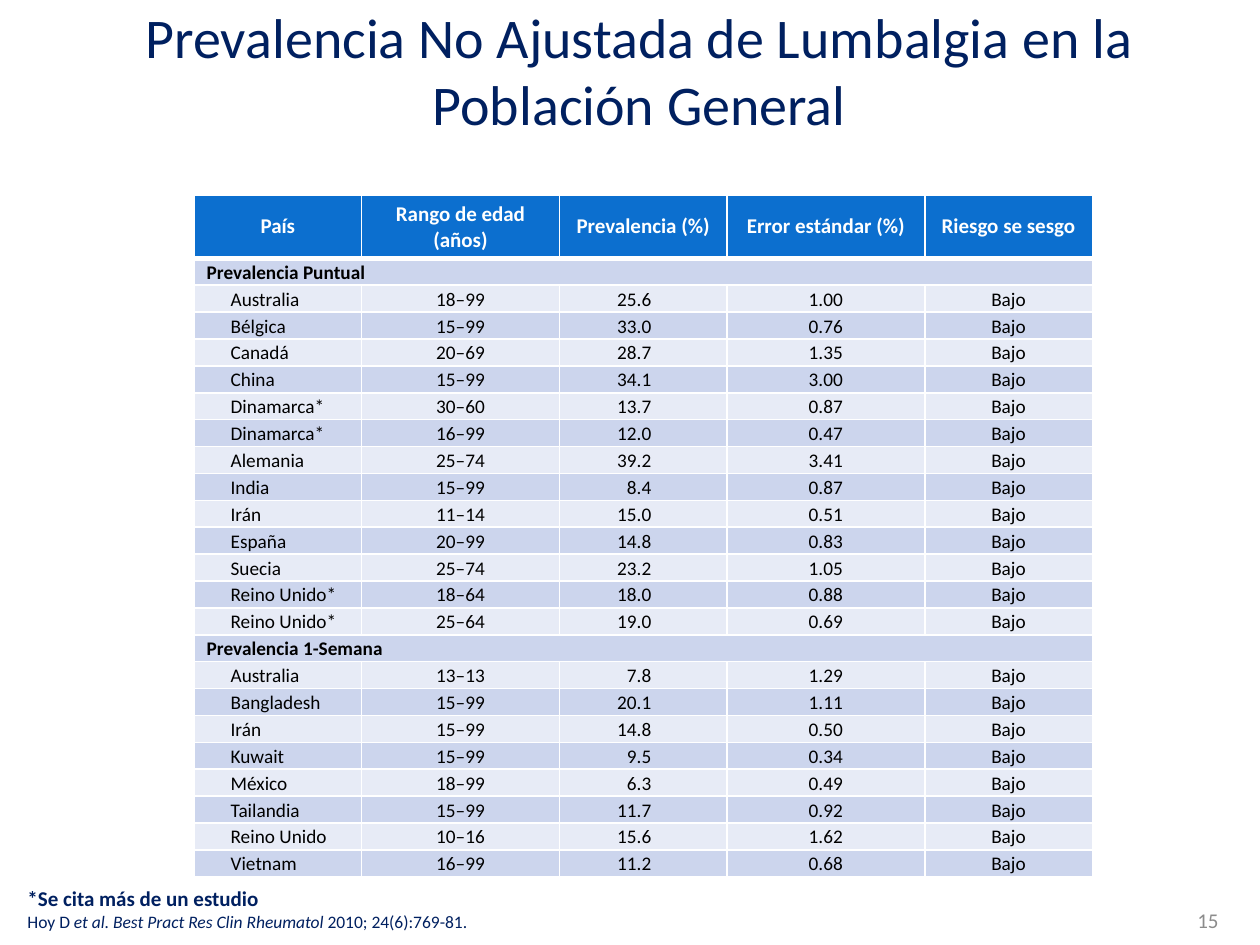
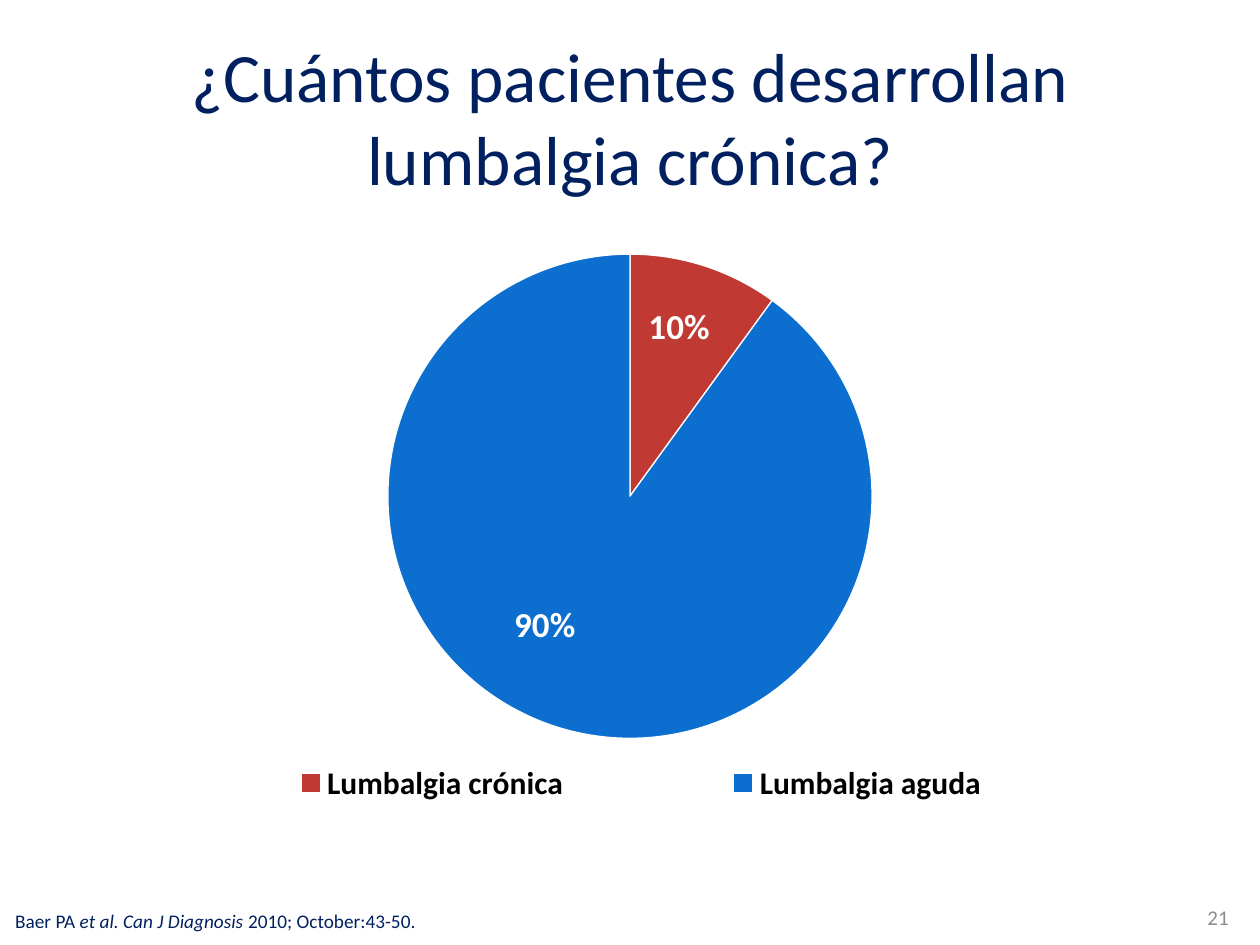
from pptx import Presentation
from pptx.chart.data import CategoryChartData
from pptx.dml.color import RGBColor
from pptx.enum.chart import XL_CHART_TYPE, XL_LABEL_POSITION, XL_LEGEND_POSITION
from pptx.enum.text import MSO_ANCHOR, PP_ALIGN
from pptx.oxml import parse_xml
from pptx.oxml.ns import nsdecls
from pptx.util import Inches, Pt

FONT = "Calibri"
NAVY, BLUE, RED = "002060", "0C6FCF", "C03932"
WHITE, BLACK, GREY = "FFFFFF", "000000", "8C8C8C"
BAND_DARK, BAND_LIGHT = "CCD5ED", "E7EBF6"
LEFT, CENTER, RIGHT = PP_ALIGN.LEFT, PP_ALIGN.CENTER, PP_ALIGN.RIGHT

HEADERS = ["País", "Rango de edad (años)", "Prevalencia (%)",
           "Error estándar (%)", "Riesgo se sesgo"]
COL_WIDTHS = [1.33, 1.57, 1.33, 1.57, 1.33]
RISK = "Bajo"
SECTIONS = {
    "Prevalencia Puntual": [
        ("Australia", "18–99", "25.6", "1.00"),
        ("Bélgica", "15–99", "33.0", "0.76"),
        ("Canadá", "20–69", "28.7", "1.35"),
        ("China", "15–99", "34.1", "3.00"),
        ("Dinamarca*", "30–60", "13.7", "0.87"),
        ("Dinamarca*", "16–99", "12.0", "0.47"),
        ("Alemania", "25–74", "39.2", "3.41"),
        ("India", "15–99", "8.4", "0.87"),
        ("Irán", "11–14", "15.0", "0.51"),
        ("España", "20–99", "14.8", "0.83"),
        ("Suecia", "25–74", "23.2", "1.05"),
        ("Reino Unido*", "18–64", "18.0", "0.88"),
        ("Reino Unido*", "25–64", "19.0", "0.69"),
    ],
    "Prevalencia 1-Semana": [
        ("Australia", "13–13", "7.8", "1.29"),
        ("Bangladesh", "15–99", "20.1", "1.11"),
        ("Irán", "15–99", "14.8", "0.50"),
        ("Kuwait", "15–99", "9.5", "0.34"),
        ("México", "18–99", "6.3", "0.49"),
        ("Tailandia", "15–99", "11.7", "0.92"),
        ("Reino Unido", "10–16", "15.6", "1.62"),
        ("Vietnam", "16–99", "11.2", "0.68"),
    ],
}
# category, value, colour, label offset as fractions of the chart
SLICES = [("Lumbalgia crónica", 10, RED, (0.01, -0.08)),
          ("Lumbalgia aguda", 90, BLUE, (-0.04, 0.02))]
LABEL_FORMAT = '#,##0"%"'


def rgb(color):
    return RGBColor.from_string(color)


def style(font, size, color, bold=False):
    font.name, font.size, font.bold = FONT, Pt(size), bold
    font.color.rgb = rgb(color)


def add_title(s, box, text, size):
    title = s.shapes.title
    title.left, title.top, title.width, title.height = map(Inches, box)
    tf = title.text_frame
    tf.text = text
    tf.word_wrap = True
    tf.vertical_anchor = MSO_ANCHOR.MIDDLE
    p = tf.paragraphs[0]
    p.alignment = CENTER
    style(p.runs[0].font, size, NAVY)


def add_text_frame(s, box, anchor):
    tf = s.shapes.add_textbox(*map(Inches, box)).text_frame
    tf.word_wrap = True
    tf.vertical_anchor = anchor
    return tf


def add_slide_number(s, left, top, number):
    tf = add_text_frame(s, (left, top, 2.33, 0.4), MSO_ANCHOR.MIDDLE)
    tf.text = number
    p = tf.paragraphs[0]
    p.alignment = RIGHT
    style(p.runs[0].font, 12, GREY)


def write_citation(p, size, authors, journal, issue):
    """Fill a paragraph with a reference whose journal part is italic."""
    for text in (authors, journal, issue):
        r = p.add_run()
        r.text = text
        style(r.font, size, NAVY)
        r.font.italic = text == journal


def set_borders(cell, bottom):
    """Draw white cell edges, 1 pt wide except for the bottom one."""
    widths = {"lnL": 1, "lnR": 1, "lnT": 1, "lnB": bottom}
    tcPr = cell._tc.get_or_add_tcPr()
    for i, (edge, width) in enumerate(widths.items()):
        tcPr.insert(i, parse_xml(
            f'<a:{edge} {nsdecls("a")} w="{Pt(width)}"><a:solidFill>'
            f'<a:srgbClr val="{WHITE}"/></a:solidFill></a:{edge}>'))


def write_cell(cell, text, fill, size, color, bold, align, bottom=1):
    cell.text = text
    cell.vertical_anchor = MSO_ANCHOR.MIDDLE
    cell.fill.solid()
    cell.fill.fore_color.rgb = rgb(fill)
    set_borders(cell, bottom)
    p = cell.text_frame.paragraphs[0]
    p.alignment = align
    style(p.font, size, color, bold)
    for r in p.runs:
        style(r.font, size, color, bold)
    return p


def add_prevalence_table(s, left, top, header_height, row_height):
    rows = []
    for section, countries in SECTIONS.items():
        rows.append((section,))
        rows += [(*country, RISK) for country in countries]
    height = header_height + row_height * len(rows)
    table = s.shapes.add_table(len(rows) + 1, len(HEADERS), Inches(left), Inches(top),
                               Inches(sum(COL_WIDTHS)), Inches(height)).table
    for column, width in zip(table.columns, COL_WIDTHS):
        column.width = Inches(width)

    table.rows[0].height = Inches(header_height)
    for c, text in enumerate(HEADERS):
        write_cell(table.cell(0, c), text, BLUE, 12, WHITE, True, CENTER, bottom=3)

    aligns = [LEFT, CENTER, RIGHT, CENTER, CENTER]
    for i, values in enumerate(rows, start=1):
        table.rows[i].height = Inches(row_height)
        is_section = len(values) == 1
        if is_section:
            table.cell(i, 0).merge(table.cell(i, len(HEADERS) - 1))
        for c, text in enumerate(values):
            cell = table.cell(i, c)
            p = write_cell(cell, text, BAND_DARK if i % 2 else BAND_LIGHT,
                           11, BLACK, is_section, aligns[c])
            cell.margin_top, cell.margin_bottom = Inches(0.02), Inches(0.01)
            if aligns[c] == RIGHT:
                cell.margin_right = Inches(0.6)
            if c == 0 and not is_section:
                p._p.get_or_add_pPr().set("marL", str(Inches(0.19)))


def manual_layout(x, y, w=None, h=None, inner=False):
    """Return a c:layout element; x and y are offsets when no size is given."""
    parts = '<c:layoutTarget val="inner"/>' if inner else ""
    if w:
        parts += '<c:xMode val="edge"/><c:yMode val="edge"/>'
    parts += f'<c:x val="{x}"/><c:y val="{y}"/>'
    if w:
        parts += f'<c:w val="{w}"/><c:h val="{h}"/>'
    return parse_xml(f'<c:layout {nsdecls("c")}><c:manualLayout>{parts}'
                     '</c:manualLayout></c:layout>')


def replace_layout(parent, layout, index):
    for old in parent.xpath("./c:layout"):
        parent.remove(old)
    parent.insert(index, layout)


def add_chronic_pie(s, box):
    data = CategoryChartData()
    data.categories = [name for name, *_ in SLICES]
    data.add_series("Series 1", [value for _, value, *_ in SLICES])
    chart = s.shapes.add_chart(XL_CHART_TYPE.PIE, *map(Inches, box), data).chart
    chart.has_title = False
    style(chart.font, 16, BLACK)

    chart.has_legend = True
    legend = chart.legend
    legend.position = XL_LEGEND_POSITION.BOTTOM
    legend.include_in_layout = False
    style(legend.font, 18, BLACK, bold=True)
    replace_layout(legend._element, manual_layout(0.09, 0.86, 0.84, 0.08), 1)

    plot = chart.plots[0]
    plot.vary_by_categories = True
    replace_layout(chart._chartSpace.chart.plotArea,
                   manual_layout(0.297, 0.117, 0.407, 0.717, inner=True), 0)
    plot.has_data_labels = True
    labels = plot.data_labels
    labels.show_value = True
    labels.number_format, labels.number_format_is_linked = LABEL_FORMAT, False
    style(labels.font, 20, WHITE, bold=True)

    for i, (_, _, color, offset) in enumerate(SLICES):
        point = plot.series[0].points[i]
        point.format.fill.solid()
        point.format.fill.fore_color.rgb = rgb(color)
        point.format.line.color.rgb = rgb(WHITE)
        point.format.line.width = Pt(0.75)
        label = point.data_label
        style(label.font, 20, WHITE, bold=True)
        label.position = XL_LABEL_POSITION.CENTER
        dLbl = label._dLbl
        replace_layout(dLbl, manual_layout(*offset), 1)
        number_format = LABEL_FORMAT.replace('"', "&quot;")
        dLbl.insert(2, parse_xml(f'<c:numFmt {nsdecls("c")} '
                                 f'formatCode="{number_format}" sourceLinked="0"/>'))


def build_prevalence_slide(s):
    add_title(s, (0.43, 0.18, 9.29, 0.74),
              "Prevalencia No Ajustada de Lumbalgia en la Población General", 32)
    add_slide_number(s, 7.44, 7.1, "15")
    tf = add_text_frame(s, (0.12, 6.98, 5, 0.49), MSO_ANCHOR.TOP)
    tf.text = "*Se cita más de un estudio"
    style(tf.paragraphs[0].runs[0].font, 12, NAVY, bold=True)
    write_citation(tf.add_paragraph(), 10, "Hoy D ",
                   "et al. Best Pract Res Clin Rheumatol", " 2010; 24(6):769-81.")
    add_prevalence_table(s, 1.54, 1.55, header_height=0.5, row_height=0.2135)


def build_chronic_slide(s):
    add_title(s, (0.5, 0.3, 9, 1.25),
              "¿Cuántos pacientes desarrollan lumbalgia crónica?", 39.6)
    add_slide_number(s, 7.52, 7.08, "21")
    tf = add_text_frame(s, (0.12, 7.21, 9.48, 0.19), MSO_ANCHOR.BOTTOM)
    tf.margin_left = tf.margin_top = tf.margin_right = tf.margin_bottom = 0
    write_citation(tf.paragraphs[0], 11, "Baer PA ",
                   "et al. Can J Diagnosis ", "2010; October:43-50.")
    add_chronic_pie(s, (0.27, 1.39, 9.45, 5.36))


def main():
    prs = Presentation()
    prs.slide_width, prs.slide_height = Inches(10), Inches(7.5)
    title_only = prs.slide_layouts[5]
    for build in (build_prevalence_slide, build_chronic_slide):
        build(prs.slides.add_slide(title_only))
    prs.save("out.pptx")


if __name__ == "__main__":
    main()
